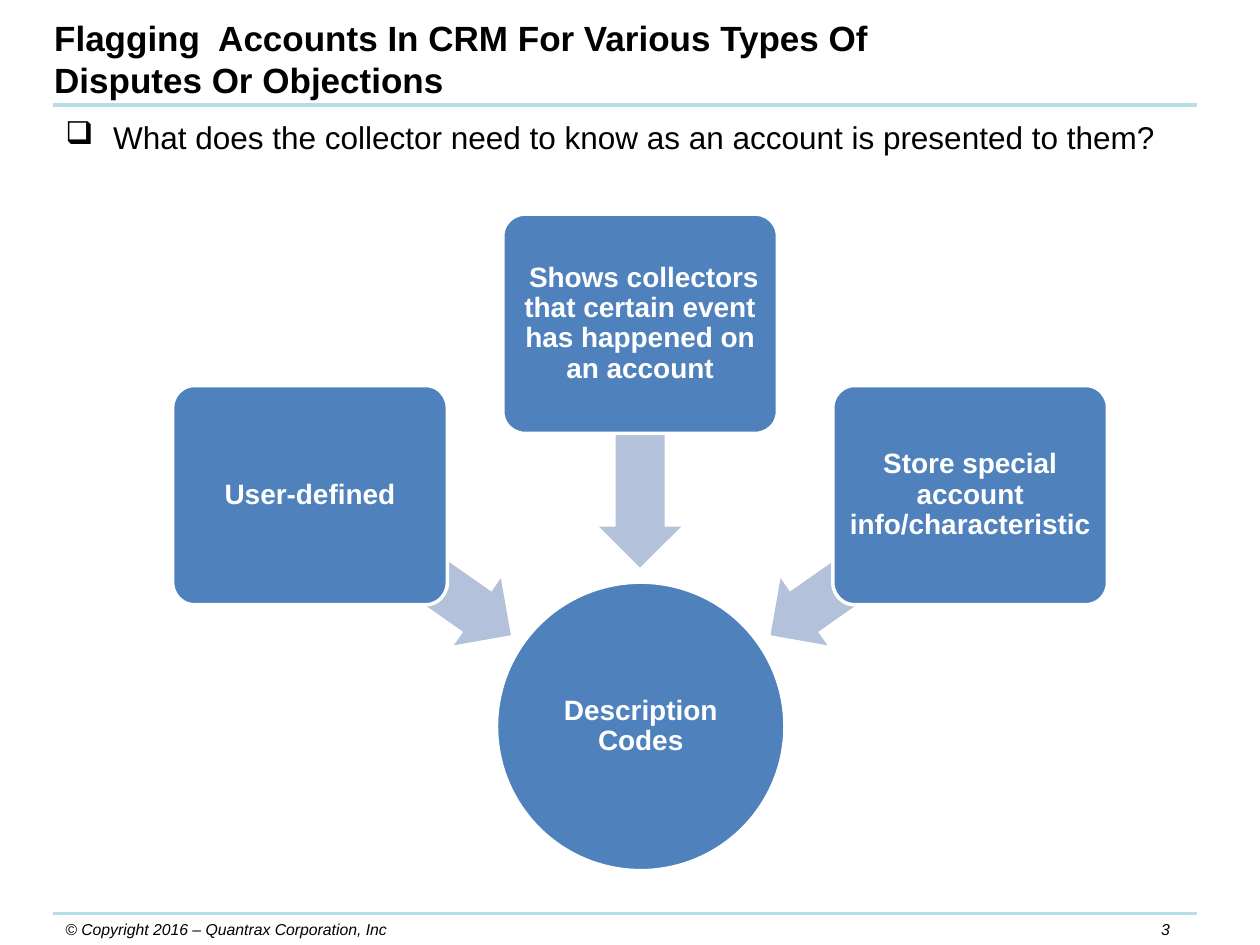
import pptx
import pptx.util
import pptx.dml.color
import pptx.enum.shapes
import pptx.enum.text
from lxml import etree
from pptx.oxml.ns import qn

Inches = pptx.util.Inches
Pt = pptx.util.Pt
SHAPE = pptx.enum.shapes.MSO_SHAPE
ANCHOR = pptx.enum.text.MSO_ANCHOR
ALIGN = pptx.enum.text.PP_ALIGN
COLORS = {
    "text": "000000",
    "light": "FFFFFF",
    "rule": "B7DEE8",
    "node": "4F81BD",
    "arrow": "B3C1DB",
}


def color(name):
    return pptx.dml.color.RGBColor.from_string(COLORS[name])


def write(shape, text, size=16, fill="text", bold=False, italic=False,
          align=ALIGN.LEFT, anchor=ANCHOR.TOP, spacing=1.0, margin=None,
          bullet=None, indent=0.38):
    frame = shape.text_frame
    frame.word_wrap = True
    frame.auto_size = pptx.enum.text.MSO_AUTO_SIZE.NONE
    frame.vertical_anchor = anchor
    if margin is not None:
        frame.margin_left = frame.margin_right = Inches(margin)
        frame.margin_top = frame.margin_bottom = Inches(margin)
    paragraph = frame.paragraphs[0]
    paragraph.text = text
    paragraph.alignment = align
    paragraph.line_spacing = spacing
    paragraph.space_before = Pt(0)
    if bullet:
        properties = paragraph._p.get_or_add_pPr()
        properties.set("marL", str(Inches(indent)))
        properties.set("indent", str(-Inches(indent)))
        etree.SubElement(properties, qn("a:buChar")).set("char", bullet)
    font = paragraph.runs[0].font
    font.name, font.size = "Arial", Pt(size)
    font.bold, font.italic = bold, italic
    font.color.rgb = color(fill)


class SlideBuilder:
    def __init__(self, slide):
        self.slide = slide

    def title(self, text, left, top, width, height):
        shape = self.slide.shapes.title
        shape.left, shape.top = Inches(left), Inches(top)
        shape.width, shape.height = Inches(width), Inches(height)
        write(shape, text, size=20, bold=True)

    def text(self, text, left, top, width, height, **style):
        box = self.slide.shapes.add_textbox(
            Inches(left), Inches(top), Inches(width), Inches(height))
        write(box, text, **style)

    def rule(self, top):
        line = self.slide.shapes.add_connector(
            pptx.enum.shapes.MSO_CONNECTOR.STRAIGHT,
            Inches(0.42), Inches(top), Inches(9.5), Inches(top))
        line.line.color.rgb = color("rule")
        line.line.width = Pt(2.25)
        etree.SubElement(line._element.spPr, qn("a:effectLst"))

    def shape(self, kind, left, top, width, height, fill, adjustments=()):
        shape = self.slide.shapes.add_shape(
            kind, Inches(left), Inches(top), Inches(width), Inches(height))
        shape.shadow.inherit = False
        shape.fill.solid()
        shape.fill.fore_color.rgb = color(fill)
        for index, value in enumerate(adjustments):
            shape.adjustments[index] = value
        return shape

    def node(self, kind, text, left, top, width, height, margin, adjustments=()):
        shape = self.shape(kind, left, top, width, height, "node", adjustments)
        shape.line.color.rgb = color("light")
        shape.line.width = Pt(2)
        write(shape, text, fill="light", bold=True, align=ALIGN.CENTER,
              anchor=ANCHOR.MIDDLE, spacing=0.9, margin=margin)

    def arrow(self, left, top, rotation):
        shape = self.shape(SHAPE.LEFT_ARROW, left, top, 1.94, 0.65, "arrow", (0.6, 0.5))
        shape.line.fill.background()
        shape.rotation = rotation


def main():
    presentation = pptx.Presentation()
    presentation.slide_width, presentation.slide_height = Inches(10), Inches(7.5)
    builder = SlideBuilder(presentation.slides.add_slide(presentation.slide_layouts[5]))

    # Header and footer
    builder.rule(0.83)
    builder.text("3", 9, 7.25, 0.5, 0.25, size=9, italic=True, align=ALIGN.CENTER)
    builder.text("© Copyright 2016 – Quantrax Corporation, Inc",
                 0.42, 7.25, 3.25, 0.25, size=9, italic=True)
    builder.rule(7.25)
    builder.title("Flagging  Accounts In CRM For Various Types Of Disputes Or Objections",
                  0.33, 0.08, 7.33, 0.77)

    # Question
    builder.text("What does the collector need to know as an account is presented to them?",
                 0.42, 0.92, 9.33, 1.17, size=18, spacing=0.9, bullet="❑")

    # Three boxes pointing at the central circle
    builder.node(SHAPE.OVAL, "Description Codes", 3.94, 4.62, 2.29, 2.29, margin=0.01)
    branches = [
        ("User-defined", 3.06, (2.29, 4.16, 215)),
        (" Shows collectors that certain event has happened on an account",
         1.7, (4.11, 3.21, 270)),
        ("Store special account info/characteristic", 3.06, (5.94, 4.16, 325)),
    ]
    for index, (text, top, arrow) in enumerate(branches):
        builder.arrow(*arrow)
        builder.node(SHAPE.ROUNDED_RECTANGLE, text, 1.37 + 2.62 * index, top,
                     2.18, 1.74, margin=0.03, adjustments=(0.1,))

    presentation.save("out.pptx")


if __name__ == "__main__":
    main()
